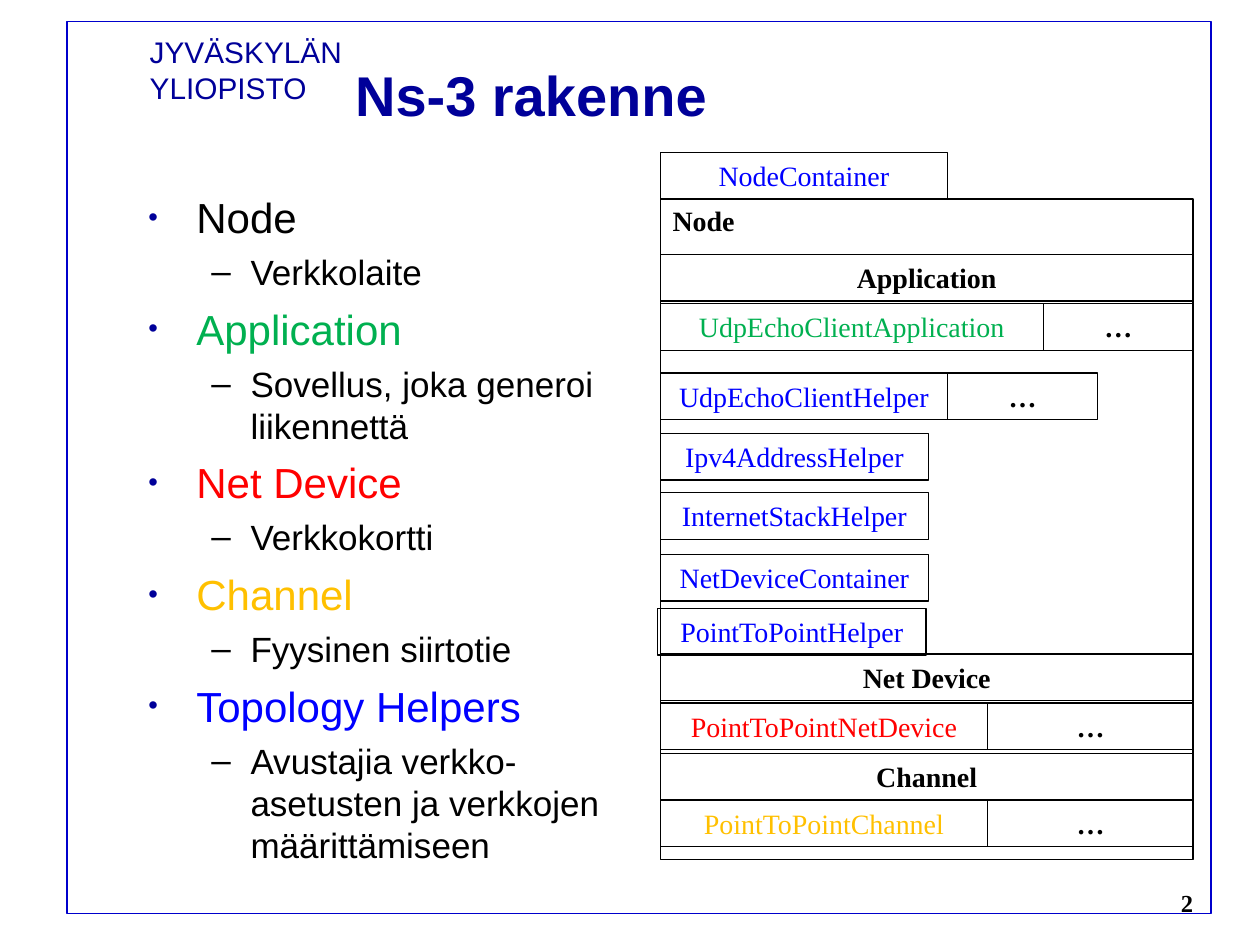
"""Build the slide on the structure of ns-3."""
import pptx
import pptx.util
import pptx.dml.color
import pptx.enum.shapes
import pptx.enum.text
import pptx.oxml.ns
from lxml import etree

Inches, Pt = pptx.util.Inches, pptx.util.Pt
Align, Anchor = pptx.enum.text.PP_ALIGN, pptx.enum.text.MSO_ANCHOR
SANS, SERIF = "Arial", "Times New Roman"
NAVY, BLACK, BLUE = "000099", "000000", "0000FF"
GREEN, RED, GOLD = "00B050", "FF0000", "FFC000"

TOPICS = [
    ("Node", BLACK, "Verkkolaite"),
    ("Application", GREEN, "Sovellus, joka generoi liikennettä"),
    ("Net Device", RED, "Verkkokortti"),
    ("Channel", GOLD, "Fyysinen siirtotie"),
    ("Topology Helpers", BLUE, "Avustajia verkko-asetusten ja verkkojen määrittämiseen"),
]
LEFT, WIDE, HIGH = 5.24, 4.23, 0.37
ROWS = [
    (LEFT, 1.21, [("NodeContainer", BLUE, 2.28)]),
    (LEFT, 2.02, [("Application", BLACK, WIDE)]),
    (LEFT, 2.41, [("UdpEchoClientApplication", GREEN, 3.04), ("…", BLACK, 1.19)]),
    (LEFT, 2.96, [("UdpEchoClientHelper", BLUE, 2.28), ("…", BLACK, 1.19)]),
    (LEFT, 3.44, [("Ipv4AddressHelper", BLUE, 2.13)]),
    (LEFT, 3.91, [("InternetStackHelper", BLUE, 2.13)]),
    (LEFT, 4.4, [("NetDeviceContainer", BLUE, 2.13)]),
    (5.22, 4.83, [("PointToPointHelper", BLUE, 2.13)]),
    (LEFT, 5.19, [("Net Device", BLACK, WIDE)]),
    (LEFT, 5.58, [("PointToPointNetDevice", RED, 2.6), ("…", BLACK, 1.63)]),
    (LEFT, 5.98, [("Channel", BLACK, WIDE)]),
    (LEFT, 6.35, [("PointToPointChannel", GOLD, 2.6), ("…", BLACK, 1.63)]),
]


def color(code):
    return pptx.dml.color.RGBColor.from_string(code)


def style(par, text, size, face, code, bold=False, align=Align.LEFT):
    par.text = text
    par.alignment = align
    font = par.font
    font.size, font.name, font.bold = Pt(size), face, bold
    font.color.rgb = color(code)


def add_text(slide, spot, *look, anchor=Anchor.TOP, wrap=True, **more):
    frame = slide.shapes.add_textbox(*map(Inches, spot)).text_frame
    frame.word_wrap = wrap
    frame.vertical_anchor = anchor
    style(frame.paragraphs[0], *look, **more)


def add_box(slide, spot, code=BLACK, width=0.75):
    kind = pptx.enum.shapes.MSO_SHAPE.RECTANGLE
    box = slide.shapes.add_shape(kind, *map(Inches, spot))
    box.shadow.inherit = False
    box.fill.background()
    box.line.color.rgb = color(code)
    box.line.width = Pt(width)
    return box


def add_bullet(par, mark, left, hang, code=None, scale=None):
    props = par._p.get_or_add_pPr()
    props.set("marL", str(Inches(left)))
    props.set("indent", str(-Inches(hang)))
    qn = pptx.oxml.ns.qn
    if code:
        tint = etree.SubElement(props, qn("a:buClr"))
        etree.SubElement(tint, qn("a:srgbClr"), val=code)
    if scale:
        etree.SubElement(props, qn("a:buSzPct"), val=str(scale * 1000))
    etree.SubElement(props, qn("a:buFont"), typeface=SANS)
    etree.SubElement(props, qn("a:buChar"), char=mark)


def add_topics(slide, spot):
    frame = slide.shapes.add_textbox(*map(Inches, spot)).text_frame
    frame.word_wrap = True
    for num, (head, code, note) in enumerate(TOPICS):
        par = frame.add_paragraph() if num else frame.paragraphs[0]
        add_bullet(par, "•", 0.38, 0.38, NAVY, 65)
        style(par, head, 24, SANS, code)
        if num:
            par.space_before = Pt(6)
        par = frame.add_paragraph()
        par.level = 1
        add_bullet(par, "–", 0.81, 0.31)
        style(par, note, 20, SANS, BLACK)
        par.space_before = Pt(5)


def add_stack(slide):
    add_box(slide, (LEFT, 1.58, WIDE, 5.24))
    add_text(slide, (LEFT, 1.57, 0.7, HIGH), "Node", 16, SERIF, BLACK, True, wrap=False)
    for left, top, cells in ROWS:
        for text, code, width in cells:
            frame = add_box(slide, (left, top, width, HIGH)).text_frame
            frame.word_wrap = True
            frame.vertical_anchor = Anchor.TOP
            style(frame.paragraphs[0], text, 16, SERIF, code, code == BLACK, Align.CENTER)
            left += width


def main():
    deck = pptx.Presentation()
    deck.slide_width, deck.slide_height = Inches(10), Inches(7.5)
    slide = deck.slides.add_slide(deck.slide_layouts[6])
    add_text(slide, (1.09, 0.22, 2.97, 0.38), "JYVÄSKYLÄN YLIOPISTO", 17, SANS, NAVY)
    add_box(slide, (0.53, 0.17, 9.08, 7.08), "0000CC", 1)
    add_text(slide, (2.72, 0.44, 6.74, 0.61), "Ns-3 rakenne", 32, SANS, NAVY, True,
             anchor=Anchor.MIDDLE)
    add_text(slide, (9.08, 7, 0.68, 0.5), "2", 14, SERIF, BLACK, True, Align.CENTER)
    add_topics(slide, (1.08, 1.47, 4.15, 5.44))
    add_stack(slide)
    deck.save("out.pptx")


if __name__ == "__main__":
    main()
